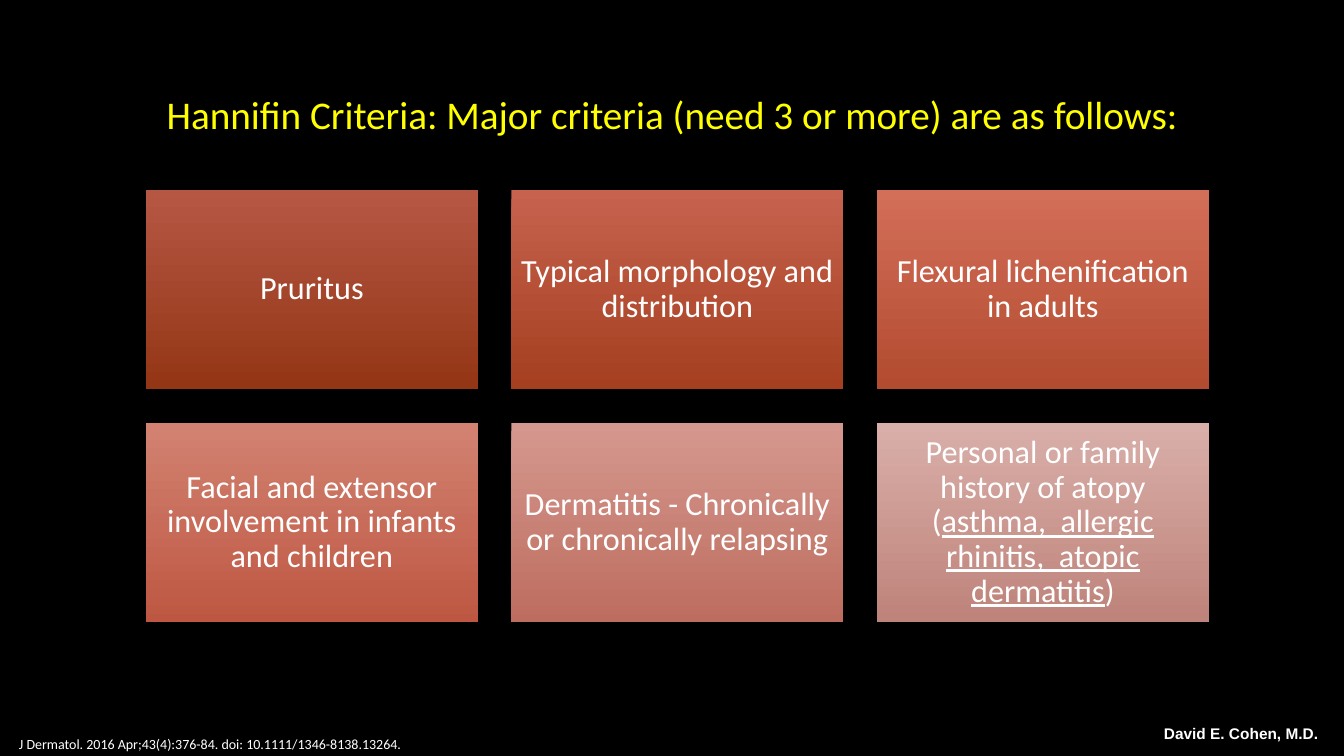
from pptx import Presentation
from pptx.dml.color import RGBColor
from pptx.enum.shapes import MSO_SHAPE
from pptx.enum.text import MSO_ANCHOR, PP_ALIGN
from pptx.util import Emu, Pt

RECTANGLE = MSO_SHAPE.RECTANGLE
TOP, MIDDLE = MSO_ANCHOR.TOP, MSO_ANCHOR.MIDDLE
LEFT, CENTER = PP_ALIGN.LEFT, PP_ALIGN.CENTER

# Content
TITLE = "Hannifin Criteria: Major criteria (need 3 or more) are as follows:"
CITATION = "J Dermatol. 2016 Apr;43(4):376-84. doi: 10.1111/1346-8138.13264."
AUTHOR = "David E. Cohen, M.D."
# Text runs (every second one underlined), top colour, bottom colour
CRITERIA = [
    (["Pruritus"], "B65744", "933615"),
    (["Typical morphology and distribution"], "C6624E", "A53F20"),
    (["Flexural lichenification in adults"], "D36E59", "B24B30"),
    (["Facial and extensor involvement in infants and children"], "D38272", "BD5742"),
    (["Dermatitis - Chronically or chronically relapsing"], "D5988E", "BD6D5F"),
    (["Personal or family history of atopy (",
      "asthma,  allergic rhinitis,  atopic dermatitis", ")"], "D9AFA9", "BE837A"),
]

# Layout in px
SLIDE_W, SLIDE_H = 1344, 756
GRID_LEFT, GRID_TOP, GRID_W, GRID_H = 146, 190, 1063, 432
CARD_W, CARD_H = 332, 199
COLUMNS, ROWS = 3, 2
STEP_X = (GRID_W - CARD_W) / (COLUMNS - 1)
STEP_Y = (GRID_H - CARD_H) / (ROWS - 1)
CARD_INSET = 9


def px(length):
    return Emu(round(length * 914400 / 100.8))


def color(hex_string):
    return RGBColor.from_string(hex_string)


def style(paragraph, size, hex_string, font="Calibri", align=LEFT, bold=False):
    paragraph.alignment = align
    paragraph.font.name = font
    paragraph.font.size = Pt(size)
    paragraph.font.bold = bold
    paragraph.font.color.rgb = color(hex_string)


def add_label(slide, text, box, anchor=TOP, wrap=True, **look):
    frame = slide.shapes.add_textbox(*map(px, box)).text_frame
    frame.word_wrap = wrap
    frame.vertical_anchor = anchor
    frame.text = text
    style(frame.paragraphs[0], **look)


def add_card(slide, index, runs, top_color, bottom_color):
    row, column = divmod(index, COLUMNS)
    card = slide.shapes.add_shape(
        RECTANGLE, px(GRID_LEFT + column * STEP_X), px(GRID_TOP + row * STEP_Y),
        px(CARD_W), px(CARD_H))
    card.shadow.inherit = False
    card.line.fill.background()
    card.fill.gradient()
    card.fill.gradient_angle = 270
    for stop, shade in zip(card.fill.gradient_stops, (top_color, bottom_color)):
        stop.color.rgb = color(shade)

    frame = card.text_frame
    frame.word_wrap = True
    frame.vertical_anchor = MIDDLE
    frame.margin_left = frame.margin_right = px(CARD_INSET)
    frame.margin_top = frame.margin_bottom = px(CARD_INSET)
    paragraph = frame.paragraphs[0]
    style(paragraph, 23, "FFFFFF", align=CENTER)
    paragraph.line_spacing = 0.9
    for position, text in enumerate(runs):
        run = paragraph.add_run()
        run.text = text
        if position % 2:
            run.font.underline = True


def main():
    deck = Presentation()
    deck.slide_width, deck.slide_height = px(SLIDE_W), px(SLIDE_H)
    slide = deck.slides.add_slide(deck.slide_layouts[6])
    slide.background.fill.solid()
    slide.background.fill.fore_color.rgb = color("000000")

    # Criteria grid
    for index, criterion in enumerate(CRITERIA):
        add_card(slide, index, *criterion)

    # Title and footer
    add_label(slide, TITLE, (126, 9, 1092, 210), anchor=MIDDLE,
              size=28, hex_string="FFFF00", align=CENTER)
    add_label(slide, CITATION, (9, 731, 1087, 25), size=10, hex_string="FFFFFF")
    add_label(slide, AUTHOR, (1154, 719, 179, 29), wrap=False,
              size=11, hex_string="FFFFFF", font="Arial", bold=True)

    deck.save("out.pptx")


if __name__ == "__main__":
    main()
